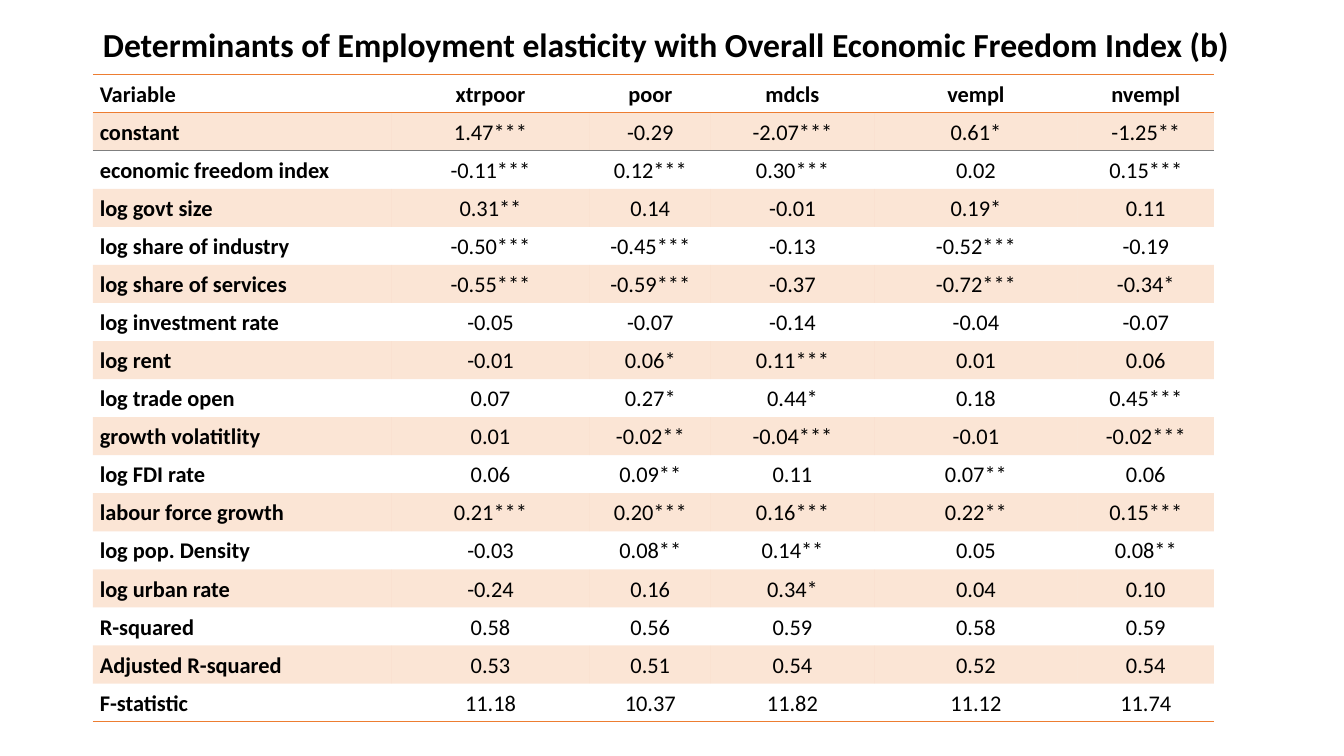
from dataclasses import dataclass

from lxml.etree import SubElement
from pptx import Presentation
from pptx.dml.color import RGBColor
from pptx.enum.text import MSO_ANCHOR, MSO_AUTO_SIZE, PP_ALIGN
from pptx.oxml.ns import qn
from pptx.slide import Slide
from pptx.table import _Cell
from pptx.text.text import TextFrame
from pptx.util import Emu, Pt

EMU_PER_PX = 9144
COLORS = {"text": "000000", "accent": "ED7D31", "rule": "7F7F7F"}
FONT = "Calibri"
NO_STYLE_NO_GRID = "{2D5ABB26-0587-4C30-8999-92F81FD0307C}"
BAND_OPACITY = 20

TITLE = "Determinants of Employment elasticity with Overall Economic Freedom Index (b)"
TABLE_LEFT, TABLE_TOP, TABLE_HEIGHT = 92, 74, 642
COLUMN_WIDTHS = (296, 197, 120, 162, 202, 135)
CELL_INSET = 7


@dataclass(frozen=True)
class ResultRow:
    label: str
    values: str


@dataclass(frozen=True)
class Border:
    side: str
    color: str
    width: float


ROWS = [
    ResultRow("Variable", "xtrpoor poor mdcls vempl nvempl"),
    ResultRow("constant", "1.47*** -0.29 -2.07*** 0.61* -1.25**"),
    ResultRow("economic freedom index", "-0.11*** 0.12*** 0.30*** 0.02 0.15***"),
    ResultRow("log govt size", "0.31** 0.14 -0.01 0.19* 0.11"),
    ResultRow("log share of industry", "-0.50*** -0.45*** -0.13 -0.52*** -0.19"),
    ResultRow("log share of services", "-0.55*** -0.59*** -0.37 -0.72*** -0.34*"),
    ResultRow("log investment rate", "-0.05 -0.07 -0.14 -0.04 -0.07"),
    ResultRow("log rent", "-0.01 0.06* 0.11*** 0.01 0.06"),
    ResultRow("log trade open", "0.07 0.27* 0.44* 0.18 0.45***"),
    ResultRow("growth volatitlity", "0.01 -0.02** -0.04*** -0.01 -0.02***"),
    ResultRow("log FDI rate", "0.06 0.09** 0.11 0.07** 0.06"),
    ResultRow("labour force growth", "0.21*** 0.20*** 0.16*** 0.22** 0.15***"),
    ResultRow("log pop. Density", "-0.03 0.08** 0.14** 0.05 0.08**"),
    ResultRow("log urban rate", "-0.24 0.16 0.34* 0.04 0.10"),
    ResultRow("R-squared", "0.58 0.56 0.59 0.58 0.59"),
    ResultRow("Adjusted R-squared", "0.53 0.51 0.54 0.52 0.54"),
    ResultRow("F-statistic", "11.18 10.37 11.82 11.12 11.74"),
]

TOP_EDGE = Border("lnT", "accent", 1)
BOTTOM_EDGE = Border("lnB", "accent", 1)
HEADER_RULE = Border("lnT", "rule", 0.5)
ROW_BORDERS = {
    0: (TOP_EDGE, BOTTOM_EDGE),
    1: (HEADER_RULE,),
    len(ROWS) - 1: (BOTTOM_EDGE,),
}


def px(length: int) -> Emu:
    return Emu(length * EMU_PER_PX)


def write_text(
    frame: TextFrame,
    text: str,
    *,
    size: int,
    bold: bool,
    line_spacing: float,
    align: PP_ALIGN = PP_ALIGN.LEFT,
) -> None:
    paragraph = frame.paragraphs[0]
    paragraph.alignment = align
    paragraph.line_spacing = line_spacing
    run = paragraph.add_run()
    run.text = text
    run.font.name = FONT
    run.font.size = Pt(size)
    run.font.bold = bold
    run.font.color.rgb = RGBColor.from_string(COLORS["text"])


def add_border(cell: _Cell, border: Border) -> None:
    properties = cell._tc.get_or_add_tcPr()
    line = SubElement(properties, qn(f"a:{border.side}"), w=str(Pt(border.width)))
    fill = SubElement(line, qn("a:solidFill"))
    SubElement(fill, qn("a:srgbClr"), val=COLORS[border.color])


def fill_band(cell: _Cell) -> None:
    cell.fill.solid()
    cell.fill.fore_color.rgb = RGBColor.from_string(COLORS["accent"])
    color = cell._tc.tcPr.find(f"{qn('a:solidFill')}/{qn('a:srgbClr')}")
    SubElement(color, qn("a:alpha"), val=str(BAND_OPACITY * 1000))


def draw_title(slide: Slide) -> None:
    title = slide.shapes.title
    title.left, title.top, title.width, title.height = map(px, (92, 18, 1150, 56))
    frame = title.text_frame
    frame.auto_size = MSO_AUTO_SIZE.NONE
    frame.vertical_anchor = MSO_ANCHOR.MIDDLE
    write_text(frame, TITLE, size=24, bold=True, line_spacing=0.9)


def draw_cell(cell: _Cell, text: str, row_index: int, column_index: int) -> None:
    cell.margin_left = cell.margin_right = px(CELL_INSET)
    cell.margin_top = cell.margin_bottom = 0
    cell.vertical_anchor = MSO_ANCHOR.MIDDLE
    write_text(
        cell.text_frame,
        text,
        size=16,
        bold=row_index == 0 or column_index == 0,
        line_spacing=1.07,
        align=PP_ALIGN.CENTER if column_index else PP_ALIGN.LEFT,
    )
    for border in ROW_BORDERS.get(row_index, ()):
        add_border(cell, border)
    if row_index % 2:
        fill_band(cell)
    else:
        cell.fill.background()


def draw_table(slide: Slide) -> None:
    bounds = map(px, (TABLE_LEFT, TABLE_TOP, sum(COLUMN_WIDTHS), TABLE_HEIGHT))
    frame = slide.shapes.add_table(len(ROWS), len(COLUMN_WIDTHS), *bounds)
    table = frame.table
    table._tbl.tblPr.find(qn("a:tableStyleId")).text = NO_STYLE_NO_GRID
    for column, width in zip(table.columns, COLUMN_WIDTHS):
        column.width = px(width)
    for row_index, result in enumerate(ROWS):
        for column_index, text in enumerate([result.label, *result.values.split()]):
            draw_cell(table.cell(row_index, column_index), text, row_index, column_index)


def main() -> None:
    presentation = Presentation()
    presentation.slide_width = px(1333)
    presentation.slide_height = px(750)
    slide = presentation.slides.add_slide(presentation.slide_layouts[5])
    draw_title(slide)
    draw_table(slide)
    presentation.save("out.pptx")


if __name__ == "__main__":
    main()
